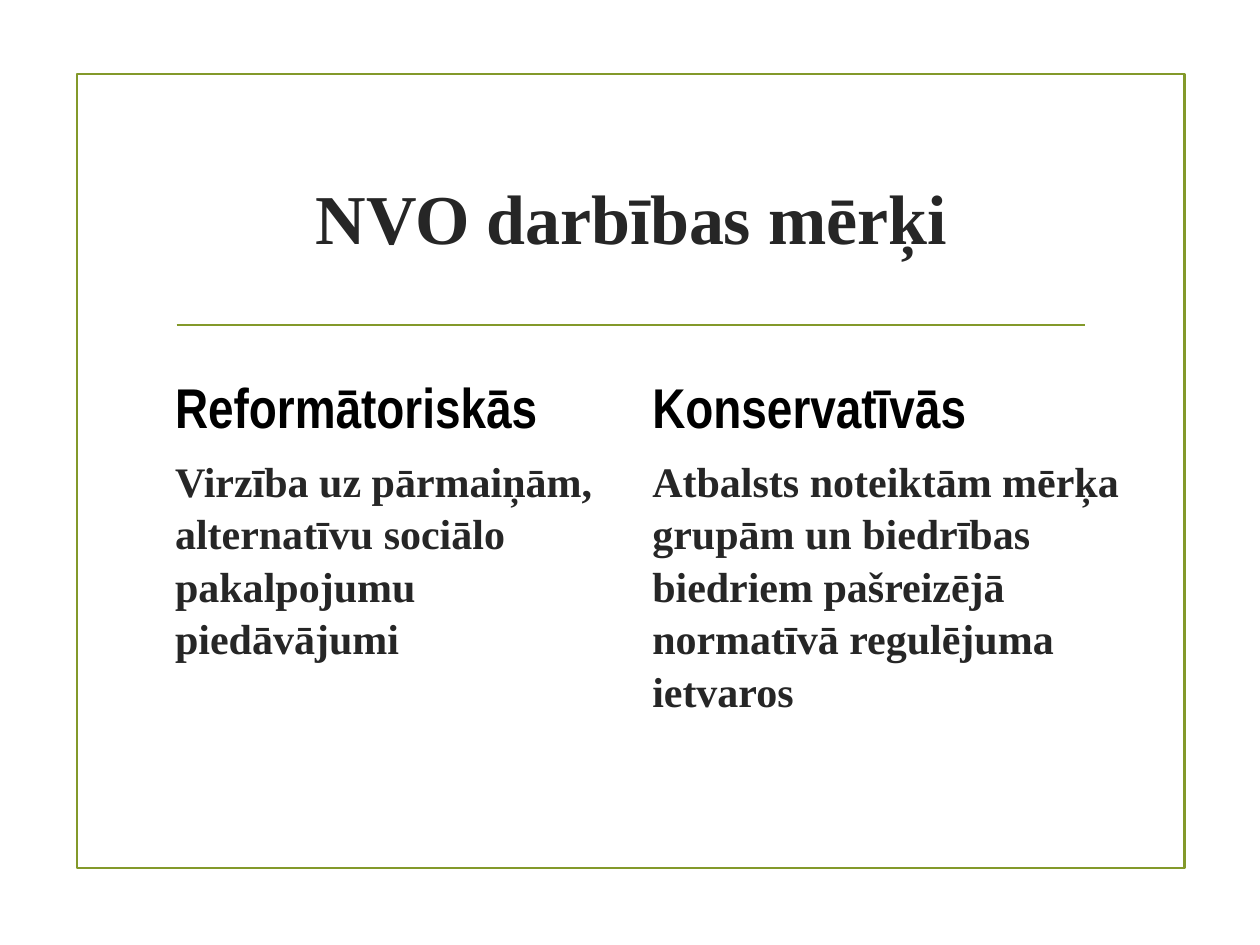
from dataclasses import dataclass

from lxml.etree import SubElement
from pptx import Presentation
from pptx.dml.color import RGBColor
from pptx.enum.shapes import MSO_CONNECTOR, MSO_SHAPE
from pptx.enum.text import MSO_ANCHOR, MSO_AUTO_SIZE, PP_ALIGN
from pptx.oxml.ns import qn
from pptx.slide import Slide
from pptx.util import Cm, Pt


@dataclass(frozen=True)
class Theme:
    """Colours, fonts and type sizes of the slide."""

    accent: RGBColor = RGBColor(0x83, 0x99, 0x2A)
    ink: RGBColor = RGBColor(0x26, 0x26, 0x26)
    black: RGBColor = RGBColor(0, 0, 0)
    white: RGBColor = RGBColor(0xFF, 0xFF, 0xFF)
    serif: str = "Times New Roman"
    narrow: str = "Arial Narrow"
    title_size: float = 40
    heading_size: float = 32
    body_size: float = 24
    line_width: float = 1.25


@dataclass(frozen=True)
class Column:
    """A heading above its explanation, with lengths in centimetres."""

    left: float
    body_width: float
    heading: str
    body: str


THEME = Theme()
HEADING_TOP, HEADING_WIDTH, HEADING_HEIGHT = 7.39, 9.27, 1.6
BODY_TOP, BODY_HEIGHT = 9.02, 7.52
COLUMNS = (
    Column(3.28, 9.27, "Reformātoriskās",
           "Virzība uz pārmaiņām, alternatīvu sociālo pakalpojumu piedāvājumi"),
    Column(12.9, 9.98, "Konservatīvās",
           "Atbalsts noteiktām mērķa grupām un biedrības biedriem "
           "pašreizējā normatīvā regulējuma ietvaros"),
)


def write_text(box, text: str, *, size: float, font: str = THEME.serif,
               color: RGBColor = THEME.ink, align: PP_ALIGN = PP_ALIGN.LEFT,
               anchor: MSO_ANCHOR = MSO_ANCHOR.TOP, space_after: float = 0,
               line_spacing: float = 1.0) -> None:
    """Write one bold paragraph into a box."""
    frame = box.text_frame
    frame.word_wrap = True
    frame.auto_size = MSO_AUTO_SIZE.NONE
    frame.vertical_anchor = anchor
    para = frame.paragraphs[0]
    para.alignment = align
    para.space_after = Pt(space_after)
    para.line_spacing = line_spacing
    span = para.add_run()
    span.text = text
    span.font.name = font
    span.font.size = Pt(size)
    span.font.bold = True
    span.font.color.rgb = color


def draw_frame(page: Slide) -> None:
    """Draw the border and the rule under the title."""
    border = page.shapes.add_shape(
        MSO_SHAPE.RECTANGLE, Cm(1.55), Cm(1.5), Cm(22.33), Cm(16))
    border.shadow.inherit = False
    border.fill.background()
    rule = page.shapes.add_connector(
        MSO_CONNECTOR.STRAIGHT, Cm(3.56), Cm(6.55), Cm(21.87), Cm(6.55))
    SubElement(rule._element.spPr, qn("a:effectLst"))
    for outline in (border.line, rule.line):
        outline.color.rgb = THEME.accent
        outline.width = Pt(THEME.line_width)


def draw_title(page: Slide, text: str) -> None:
    """Place and fill the title placeholder."""
    title = page.shapes.title
    title.left, title.top = Cm(3.28), Cm(2.54)
    title.width, title.height = Cm(18.9), Cm(3.63)
    write_text(title, text, size=THEME.title_size, align=PP_ALIGN.CENTER,
               anchor=MSO_ANCHOR.MIDDLE)


def draw_column(page: Slide, column: Column) -> None:
    """Draw a heading and the white text block below it."""
    heading = page.shapes.add_textbox(
        Cm(column.left), Cm(HEADING_TOP), Cm(HEADING_WIDTH), Cm(HEADING_HEIGHT))
    write_text(heading, column.heading, size=THEME.heading_size,
               font=THEME.narrow, color=THEME.black,
               anchor=MSO_ANCHOR.BOTTOM, space_after=6)
    body = page.shapes.add_textbox(
        Cm(column.left), Cm(BODY_TOP), Cm(column.body_width), Cm(BODY_HEIGHT))
    body.fill.solid()
    body.fill.fore_color.rgb = THEME.white
    write_text(body, column.body, size=THEME.body_size, space_after=6,
               line_spacing=1.04)


def main() -> None:
    """Build and save the deck."""
    deck = Presentation()
    deck.slide_width, deck.slide_height = Cm(25.4), Cm(19.05)
    page = deck.slides.add_slide(deck.slide_layouts.get_by_name("Title Only"))
    page.background.fill.solid()
    page.background.fill.fore_color.rgb = THEME.white
    draw_frame(page)
    draw_title(page, "NVO darbības mērķi")
    for column in COLUMNS:
        draw_column(page, column)
    deck.save("out.pptx")


if __name__ == "__main__":
    main()
